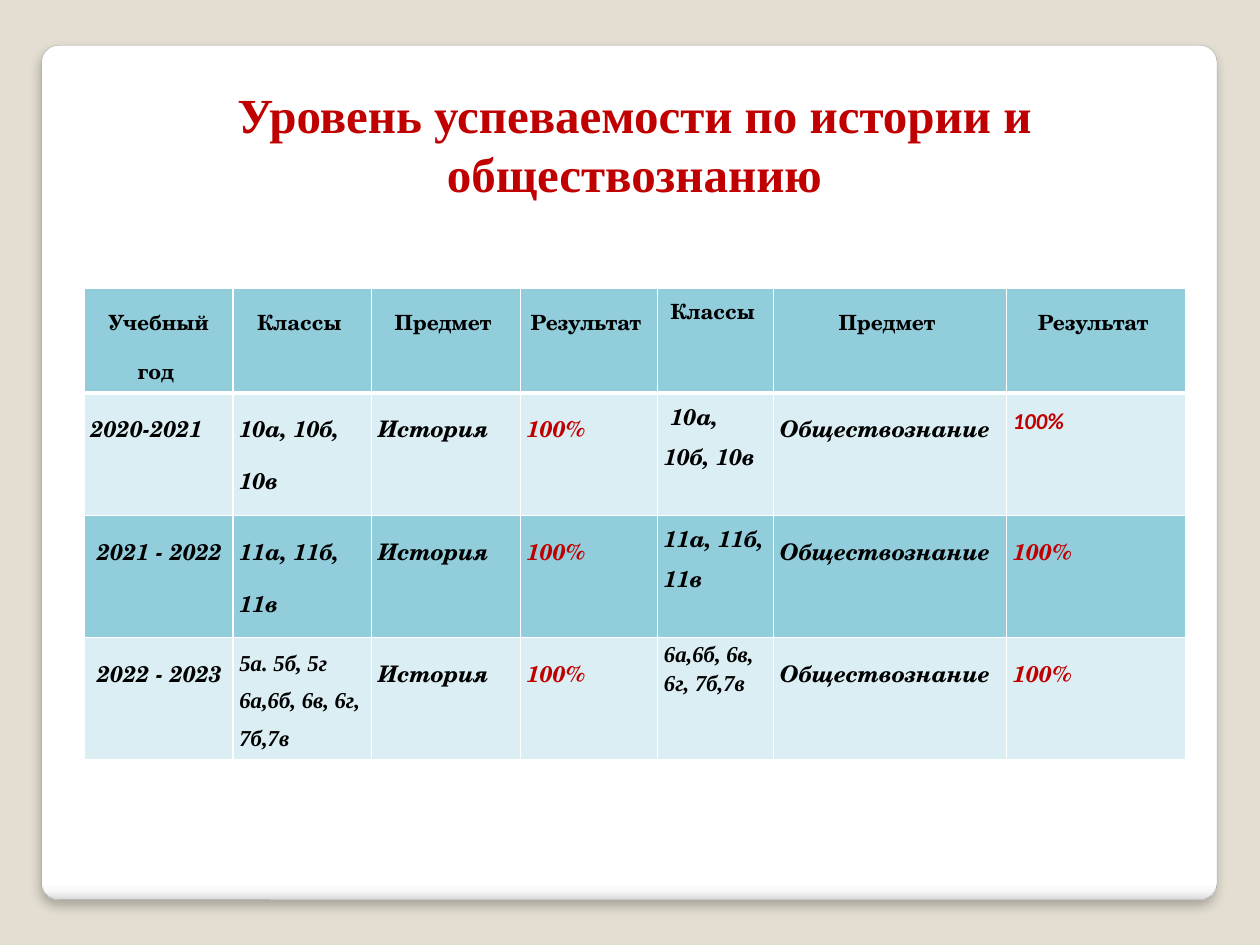
from lxml import etree
from pptx import Presentation, util as u
from pptx.dml.color import RGBColor
from pptx.enum import shapes, text
from pptx.oxml import parse_xml
from pptx.oxml.ns import qn

BACK = RGBColor(0xE3, 0xDE, 0xD1)
EDGE = RGBColor(0xA4, 0xA4, 0xA4)
RED = RGBColor(0xC0, 0, 0)
BLACK = RGBColor(0, 0, 0)
TEAL = RGBColor(0x92, 0xCD, 0xDC)
PALE = RGBColor(0xDA, 0xEE, 0xF3)
SERIF, SCHOOL, SANS = "Times New Roman", "TeX Gyre Schola", "Calibri"
NS = 'xmlns:a="http://schemas.openxmlformats.org/drawingml/2006/main"'

TITLE = "Уровень успеваемости по истории и обществознанию"
ROWS = [
    ["Учебный год ", "Классы ", "Предмет ", "Результат ", "Классы ", "Предмет ", "Результат "],
    ["2020-2021", "10а, 10б, 10в", "История", "100%", " 10а, 10б, 10в", "Обществознание", "100%"],
    [" 2021 - 2022", "11а, 11б, 11в", "История", "100%", "11а, 11б, 11в", "Обществознание", "100%"],
    [" 2022 - 2023", "5а. 5б, 5г\n6а,6б, 6в, 6г, 7б,7в", "История", "100%",
     "6а,6б, 6в, 6г, 7б,7в", "Обществознание", "100%"],
]
WIDTHS = [1.18, 1.1, 1.18, 1.09, 0.92, 1.85, 1.42]
HEIGHTS = [0.83] + [0.97] * 3
FONTS = {(1, 6): SANS, (3, 1): SERIF, (3, 4): SERIF}
STOPS = [(0, "FFFFFF"), (98, "FFFFFF"), (99, "F7F7F7"), (100, "DADADA")]


def write(frame, words, size, font=SCHOOL, color=BLACK, italic=False, align=None, gap=None):
    """Fill a text frame, one paragraph per line."""
    frame.word_wrap = True
    for k, line in enumerate(words.split("\n")):
        para = frame.paragraphs[0] if k == 0 else frame.add_paragraph()
        para.alignment, para.line_spacing = align, gap
        run = para.add_run()
        run.text = line
        face = run.font
        face.name, face.size, face.bold, face.italic = font, u.Pt(size), True, italic
        face.color.rgb = color


def inset(box, left, top, right, low):
    """Set the four inner margins in inches."""
    box.margin_left, box.margin_top = u.Inches(left), u.Inches(top)
    box.margin_right, box.margin_bottom = u.Inches(right), u.Inches(low)


def border(cell, row):
    """Draw white borders, thick under the header row."""
    props = cell._tc.get_or_add_tcPr()
    wide = {"T": 3 if row == 1 else 1, "B": 3 if row == 0 else 1}
    for k, side in enumerate("LRTB"):
        width = u.Pt(wide.get(side, 1))
        props.insert(k, parse_xml(
            f'<a:ln{side} {NS} w="{width}"><a:solidFill><a:srgbClr val="FFFFFF"/>'
            f'</a:solidFill></a:ln{side}>'))


def panel(slide):
    """Add the rounded card with its gradient and soft shadow."""
    card = slide.shapes.add_shape(
        shapes.MSO_SHAPE.ROUNDED_RECTANGLE, *map(u.Inches, (0.33, 0.36, 9.33, 6.78)))
    card.adjustments[0] = 0.02
    card.shadow.inherit = False
    card.line.color.rgb, card.line.width = EDGE, u.Pt(0.16)
    card.fill.gradient()
    card.fill.gradient_angle = 270
    props = card._element.spPr
    stops = props.find(qn("a:gradFill")).find(qn("a:gsLst"))
    for stop in list(stops):
        stops.remove(stop)
    for place, shade in STOPS:
        stop = etree.SubElement(stops, qn("a:gs"), pos=str(place * 1000))
        etree.SubElement(stop, qn("a:srgbClr"), val=shade)
    props.find(qn("a:effectLst")).append(parse_xml(
        f'<a:outerShdw {NS} blurRad="{u.Pt(6)}" dist="{u.Pt(4)}" dir="5400000" '
        'rotWithShape="0"><a:srgbClr val="000000"><a:alpha val="25000"/>'
        '</a:srgbClr></a:outerShdw>'))


def heading(slide):
    """Place and fill the title."""
    head = slide.shapes.title
    head.left, head.top, head.width, head.height = map(u.Inches, (0.98, -0.36, 8.11, 2.59))
    frame = head.text_frame
    frame.auto_size = text.MSO_AUTO_SIZE.NONE
    frame.vertical_anchor = text.MSO_ANCHOR.MIDDLE
    inset(frame, 0.1, 0.45, 0.1, 0.05)
    write(frame, TITLE, 28, SERIF, RED, align=text.PP_ALIGN.CENTER)


def marks(slide):
    """Build the table of results."""
    size = (len(ROWS), len(WIDTHS))
    grid = slide.shapes.add_table(
        *size, *map(u.Inches, (0.67, 2.29, sum(WIDTHS), sum(HEIGHTS)))).table
    for col, width in zip(grid.columns, WIDTHS):
        col.width = u.Inches(width)
    for row, height in zip(grid.rows, HEIGHTS):
        row.height = u.Inches(height)
    for r, line in enumerate(ROWS):
        for c, words in enumerate(line):
            cell = grid.cell(r, c)
            inset(cell, 0.05, 0.01, 0.05, 0)
            cell.fill.solid()
            cell.fill.fore_color.rgb = PALE if r % 2 else TEAL
            border(cell, r)
            write(cell.text_frame, words, 13 if r else 12,
                  font=FONTS.get((r, c), SCHOOL),
                  color=RED if words == "100%" else BLACK, italic=r > 0,
                  align=text.PP_ALIGN.LEFT if r else text.PP_ALIGN.CENTER,
                  gap=1.15 if c == 4 else 1.5)


def main():
    """Build and save the slide."""
    deck = Presentation()
    deck.slide_width, deck.slide_height = u.Inches(10), u.Inches(7.5)
    slide = deck.slides.add_slide(deck.slide_layouts[5])
    slide.background.fill.solid()
    slide.background.fill.fore_color.rgb = BACK
    panel(slide)
    tree = slide.shapes._spTree
    tree.append(slide.shapes.title._element)
    heading(slide)
    marks(slide)
    deck.save("out.pptx")


if __name__ == "__main__":
    main()
